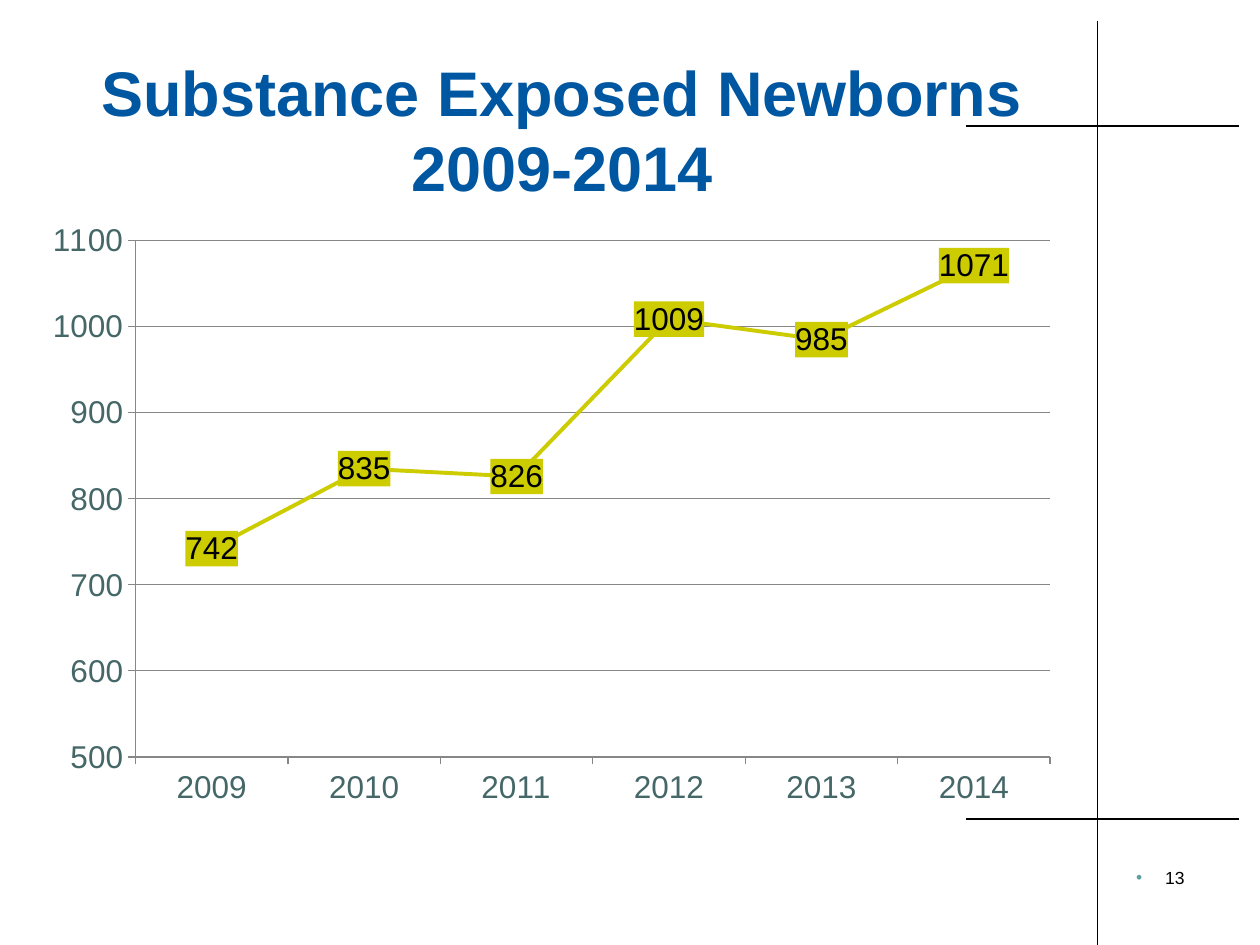
from lxml import etree
from pptx import Presentation
from pptx.chart.data import CategoryChartData
from pptx.dml.color import RGBColor
from pptx.enum import chart as ch, shapes, text
from pptx.oxml import parse_xml
from pptx.oxml.ns import nsdecls, qn
from pptx.util import Inches, Pt

COLORS = {
    "paper": "FFFFFF", "ink": "000000", "title": "0057A1", "axis": "456767",
    "grid": "878787", "series": "CCCC00", "bullet": "5F9F9F",
}


def rgb(name):
    return RGBColor.from_string(COLORS[name])


def add_text(box, words, size, color, align, anchor, bold=False):
    frame = slide.shapes.add_textbox(*map(Inches, box)).text_frame
    frame.word_wrap = True
    frame.vertical_anchor = anchor
    paragraph = frame.paragraphs[0]
    paragraph.text = words
    paragraph.alignment = align
    paragraph.font.name = "Arial"
    paragraph.font.size = Pt(size)
    paragraph.font.bold = bold
    paragraph.font.color.rgb = rgb(color)
    return paragraph


prs = Presentation()
prs.slide_width, prs.slide_height = Inches(10), Inches(7.5)
slide = prs.slides.add_slide(prs.slide_layouts[6])

corner = slide.shapes.add_shape(
    shapes.MSO_SHAPE.RECTANGLE, Inches(8.33), Inches(6.5), Inches(1.67), Inches(1))
corner.shadow.inherit = False
corner.fill.solid()
corner.fill.fore_color.rgb = rgb("paper")
corner.line.fill.background()

for ends in [(8.71, 0.17, 8.71, 7.5), (7.67, 1, 9.83, 1), (7.67, 6.5, 9.83, 6.5)]:
    rule = slide.shapes.add_connector(shapes.MSO_CONNECTOR.STRAIGHT, *map(Inches, ends))
    rule.line.color.rgb = rgb("ink")
    rule.line.width = Pt(0.75)
    etree.SubElement(rule._element.spPr, qn("a:effectLst"))

add_text((0.25, 0.25, 8.42, 1.42), "Substance Exposed Newborns\v2009-2014", 36, "title",
         text.PP_ALIGN.CENTER, text.MSO_ANCHOR.BOTTOM, bold=True)

page_number = add_text((7.17, 6.83, 2.33, 0.5), "13", 10, "ink",
                       text.PP_ALIGN.RIGHT, text.MSO_ANCHOR.TOP)
props = page_number._p.get_or_add_pPr()
props.set("marL", str(Inches(0.23)))
props.set("indent", str(-Inches(0.23)))
bullet_parts = [
    f'<a:buClr {nsdecls("a")}><a:srgbClr val="{COLORS["bullet"]}"/></a:buClr>',
    f'<a:buFont {nsdecls("a")} typeface="Arial"/>',
    f'<a:buChar {nsdecls("a")} char="•"/>',
]
for position, part in enumerate(bullet_parts):
    props.insert(position, parse_xml(part))

newborns = CategoryChartData()
newborns.categories = ["2009", "2010", "2011", "2012", "2013", "2014"]
newborns.add_series("Series 1", [742, 835, 826, 1009, 985, 1071])
chart = slide.shapes.add_chart(
    ch.XL_CHART_TYPE.LINE, Inches(0.25), Inches(1.67), Inches(8.25), Inches(4.82),
    newborns).chart
chart.has_legend = False
chart.has_title = False
chart.font.name = "Arial"
chart.font.size = Pt(18)
chart.font.color.rgb = rgb("ink")

years, counts = chart.category_axis, chart.value_axis
counts.minimum_scale, counts.maximum_scale, counts.major_unit = 500, 1100, 100
counts.has_major_gridlines = True
counts.major_gridlines.format.line.color.rgb = rgb("grid")
counts.major_gridlines.format.line.width = Pt(0.75)
for axis in (years, counts):
    axis.major_tick_mark = ch.XL_TICK_MARK.OUTSIDE
    axis.minor_tick_mark = ch.XL_TICK_MARK.NONE
    axis.format.line.color.rgb = rgb("grid")
    axis.format.line.width = Pt(0.75)
    axis.tick_labels.font.name = "Arial"
    axis.tick_labels.font.size = Pt(18)
    axis.tick_labels.font.color.rgb = rgb("axis")

plot = chart.plots[0]
plot.vary_by_categories = False
trend = plot.series[0]
trend.smooth = False
trend.marker.style = ch.XL_MARKER_STYLE.NONE
trend.format.line.color.rgb = rgb("series")
trend.format.line.width = Pt(2.25)

labels = trend.data_labels
labels.show_value = True
labels.position = ch.XL_LABEL_POSITION.CENTER
labels.font.name = "Arial"
labels.font.size = Pt(18)
labels.font.color.rgb = rgb("ink")
labels._element.find(qn("c:txPr")).addprevious(parse_xml(
    f'<c:spPr {nsdecls("c", "a")}><a:solidFill><a:srgbClr val="{COLORS["series"]}"/>'
    '</a:solidFill></c:spPr>'))

plot_area = chart._chartSpace.chart.plotArea
for old_layout in plot_area.findall(qn("c:layout")):
    plot_area.remove(old_layout)
plot_area.insert(0, parse_xml(
    f'<c:layout {nsdecls("c")}><c:manualLayout><c:layoutTarget val="inner"/>'
    '<c:xMode val="edge"/><c:yMode val="edge"/><c:x val="0.1"/><c:y val="0.05"/>'
    '<c:w val="0.88"/><c:h val="0.85"/></c:manualLayout></c:layout>'))

prs.save("out.pptx")
